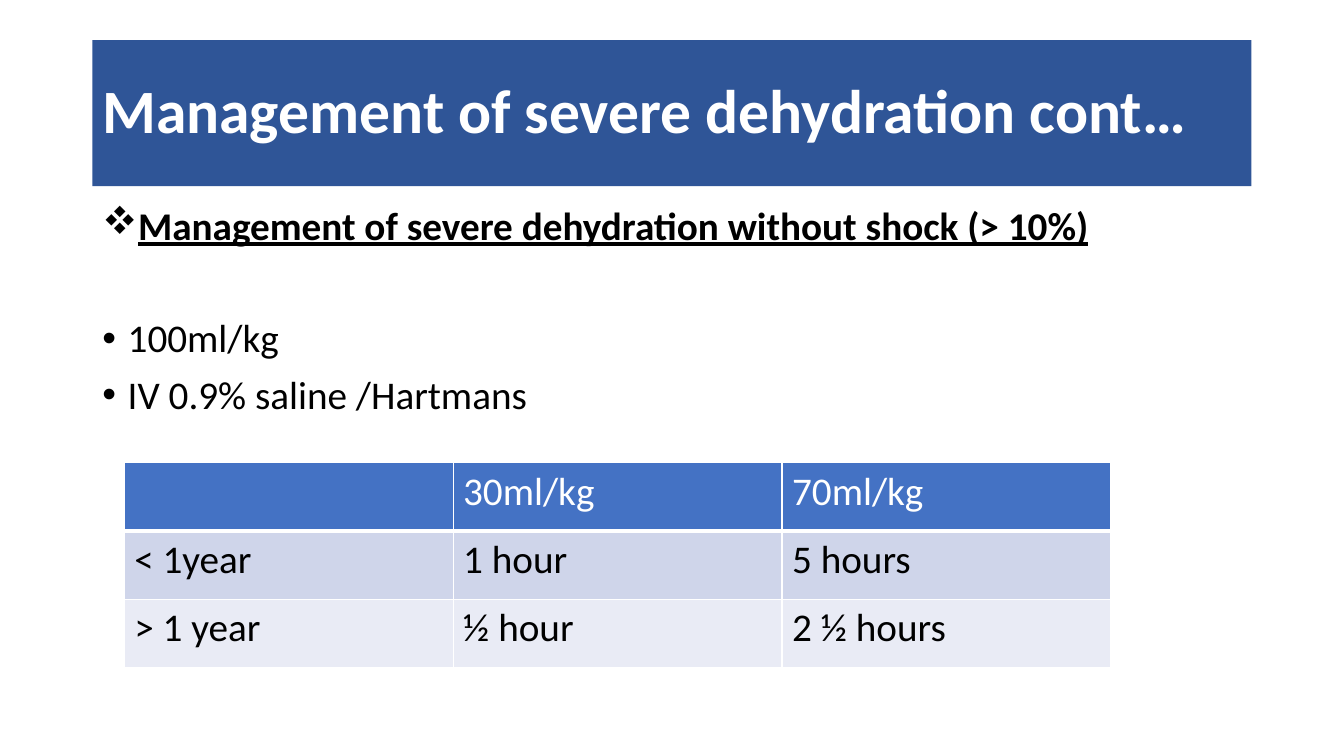
from lxml import etree
from pptx import Presentation
from pptx.dml.color import RGBColor
from pptx.enum import shapes, text
from pptx.oxml import ns
from pptx.util import Cm, Pt

NAVY = RGBColor(0x2F, 0x55, 0x97)
BLUE = RGBColor(0x44, 0x72, 0xC4)
PALE_BLUE = RGBColor(0xCF, 0xD5, 0xEA)
PALEST_BLUE = RGBColor(0xE9, 0xEB, 0xF5)
WHITE = RGBColor(0xFF, 0xFF, 0xFF)
BLACK = RGBColor(0, 0, 0)

TITLE = "Management of severe dehydration cont…"
# wording, bullet font, bullet character, space before, emphasis
POINTS = [
    ("Management of severe dehydration without shock (> 10%)", "Wingdings", "v", 10, True),
    ("100ml/kg", "Arial", "•", 50, False),
    ("IV 0.9% saline /Hartmans", "Arial", "•", 10, False),
]
INFUSION_TIMES = [
    ("", "30ml/kg", "70ml/kg"),
    ("< 1year", "1 hour", "5 hours"),
    ("> 1 year", "½ hour", "2 ½ hours"),
]
ROW_LOOKS = [(BLUE, WHITE), (PALE_BLUE, BLACK), (PALEST_BLUE, BLACK)]

LEFT = Cm(2.33)
TABLE_LEFT, TABLE_TOP = Cm(3.13), Cm(11.66)
COLUMN_WIDTH, ROW_HEIGHT = Cm(8.29), Cm(1.72)


def write(paragraph, wording, colour, **formats):
    run = paragraph.add_run()
    run.text = wording
    run.font.color.rgb = colour
    looks = {"name": "Calibri", "size": Pt(28), "bold": False, **formats}
    for attribute, value in looks.items():
        setattr(run.font, attribute, value)


def add_bullet(paragraph, font, character):
    properties = paragraph._p.get_or_add_pPr()
    properties.set("marL", str(Cm(0.64)))
    properties.set("indent", str(Cm(-0.64)))
    etree.SubElement(properties, ns.qn("a:buFont"), typeface=font)
    etree.SubElement(properties, ns.qn("a:buChar"), char=character)


def add_borders(cell, widths):
    properties = cell._tc.get_or_add_tcPr()
    for side, width in widths.items():
        border = etree.SubElement(properties, ns.qn(f"a:ln{side}"), w=str(Pt(width)))
        fill = etree.SubElement(border, ns.qn("a:solidFill"))
        etree.SubElement(fill, ns.qn("a:srgbClr"), val=str(WHITE))


deck = Presentation()
deck.slide_width, deck.slide_height = Cm(33.87), Cm(19.05)
slide = deck.slides.add_slide(deck.slide_layouts[6])

body = slide.shapes.add_textbox(LEFT, Cm(5.08), Cm(30.12), Cm(13.97)).text_frame
body.word_wrap = True
for index, (wording, font, character, space, emphasis) in enumerate(POINTS):
    point = body.add_paragraph() if index else body.paragraphs[0]
    point.line_spacing = 0.9
    point.space_before = Pt(space)
    add_bullet(point, font, character)
    write(point, wording, BLACK, bold=emphasis, underline=emphasis)

banner = slide.shapes.add_shape(
    shapes.MSO_SHAPE.RECTANGLE, LEFT, Cm(1.01), Cm(29.21), Cm(3.68))
banner.shadow.inherit = False
banner.fill.solid()
banner.fill.fore_color.rgb = NAVY
banner.line.fill.background()
banner.text_frame.vertical_anchor = text.MSO_ANCHOR.MIDDLE
heading = banner.text_frame.paragraphs[0]
heading.alignment = text.PP_ALIGN.LEFT
heading.line_spacing = 0.9
write(heading, TITLE, WHITE, size=Pt(44), bold=True)

row_count, column_count = len(INFUSION_TIMES), len(INFUSION_TIMES[0])
times = slide.shapes.add_table(
    row_count, column_count, TABLE_LEFT, TABLE_TOP,
    COLUMN_WIDTH * column_count, ROW_HEIGHT * row_count).table
for column in times.columns:
    column.width = COLUMN_WIDTH
for r, (entries, (fill, colour)) in enumerate(zip(INFUSION_TIMES, ROW_LOOKS)):
    times.rows[r].height = ROW_HEIGHT
    for c, entry in enumerate(entries):
        cell = times.cell(r, c)
        add_borders(cell, {"L": 1, "R": 1, "T": 3 if r == 1 else 1, "B": 1 if r else 3})
        cell.fill.solid()
        cell.fill.fore_color.rgb = fill
        if entry:
            write(cell.text_frame.paragraphs[0], entry, colour)

deck.save("out.pptx")
